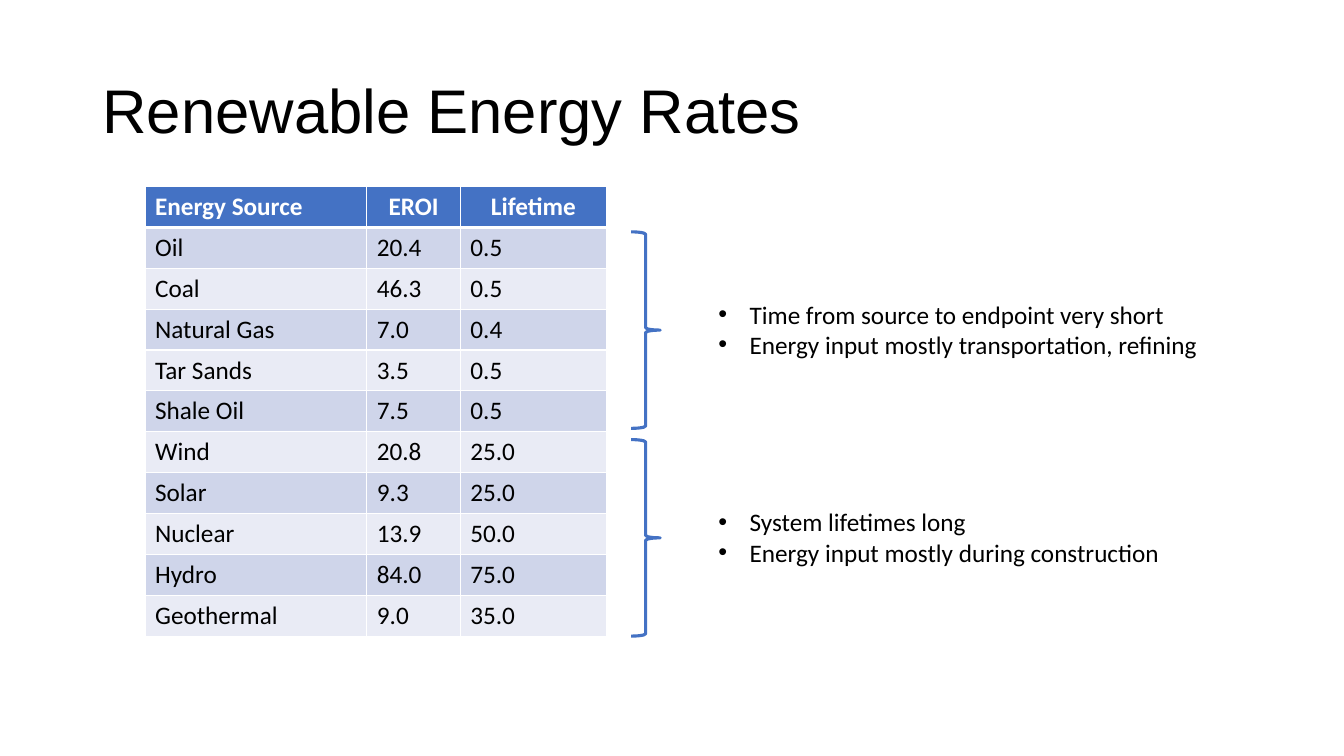
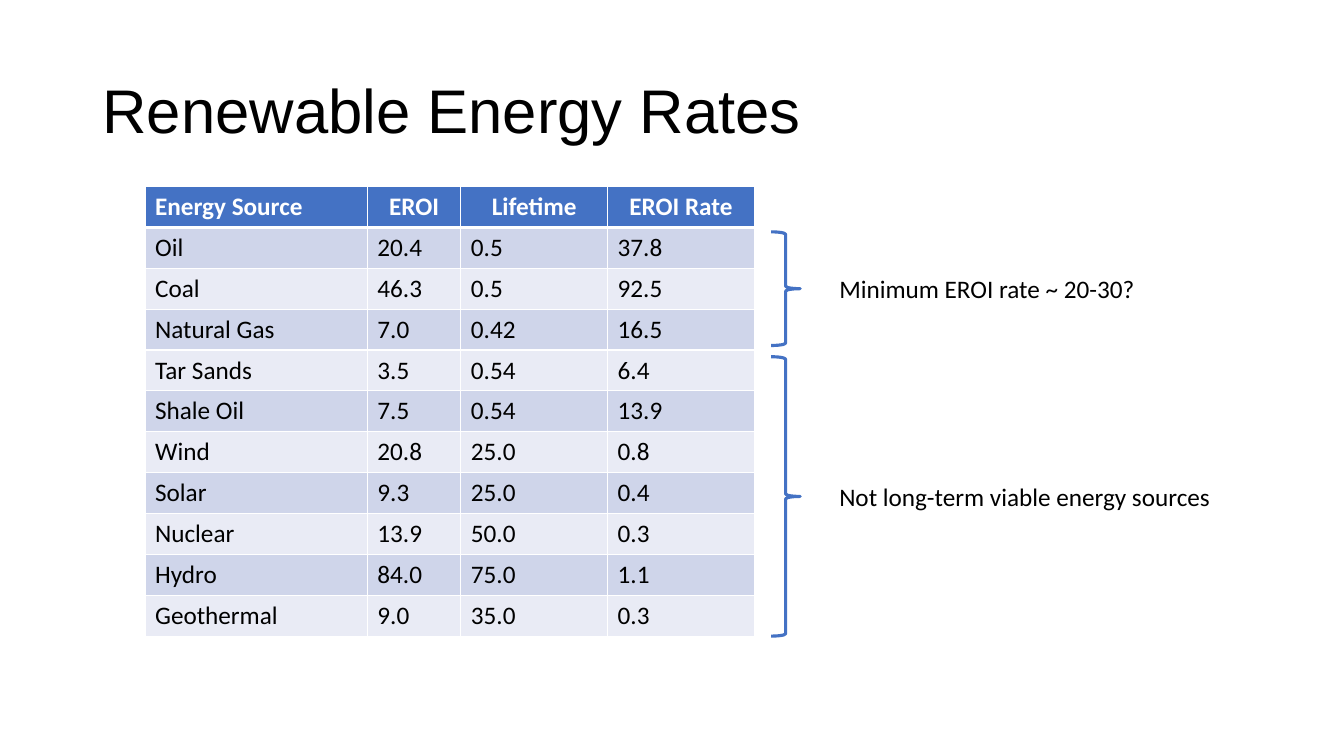
"""Build two slides comparing energy sources by EROI, lifetime and EROI rate."""
from dataclasses import dataclass

from lxml import etree
from pptx import Presentation
from pptx.dml.color import RGBColor
from pptx.enum.shapes import MSO_SHAPE
from pptx.enum.text import MSO_ANCHOR, MSO_AUTO_SIZE, PP_ALIGN
from pptx.oxml.ns import qn
from pptx.util import Pt

LEFT, CENTER = PP_ALIGN.LEFT, PP_ALIGN.CENTER
MIDDLE = MSO_ANCHOR.MIDDLE
GROW = MSO_AUTO_SIZE.SHAPE_TO_FIT_TEXT
BRACE = MSO_SHAPE.RIGHT_BRACE
PX = 5080


@dataclass(frozen=True)
class Theme:
    accent: str = "4472C4"
    band_dark: str = "CFD5EA"
    band_light: str = "E9EBF5"
    text: str = "000000"
    white: str = "FFFFFF"
    title_font: str = "Arial"
    body_font: str = "Calibri"
    title_size: int = 44
    body_size: int = 18
    brace_width: float = 2.25
    rule: int = 1
    header_rule: int = 3


THEME = Theme()


def write(frame, *lines, font=THEME.body_font, size=THEME.body_size, color=THEME.text,
          bold=False, align=LEFT, spacing=None, bullet_indent=0):
    for index, line in enumerate(lines):
        paragraph = frame.add_paragraph() if index else frame.paragraphs[0]
        paragraph.alignment = align
        if spacing:
            paragraph.line_spacing = spacing
        if bullet_indent:
            properties = paragraph._p.get_or_add_pPr()
            properties.set("marL", str(bullet_indent * PX))
            properties.set("indent", str(-bullet_indent * PX))
            etree.SubElement(properties, qn("a:buFont"), typeface="Arial")
            etree.SubElement(properties, qn("a:buChar"), char="•")
        run = paragraph.add_run()
        run.text = line
        run.font.name = font
        run.font.size = Pt(size)
        run.font.bold = bold
        run.font.color.rgb = RGBColor.from_string(color)


def add_border(cell, side, width):
    border = etree.SubElement(cell._tc.get_or_add_tcPr(), qn(f"a:{side}"), w=str(Pt(width)))
    fill = etree.SubElement(border, qn("a:solidFill"))
    etree.SubElement(fill, qn("a:srgbClr"), val=THEME.white)


TITLE = "Renewable Energy Rates"
TABLE_LEFT, TABLE_TOP, ROW_HEIGHT = 259, 333, 73
BRACES_TOP, BRACES_BOTTOM, BRACE_GAP, BRACE_WIDTH = 414, 1136, 20, 52
NOTE_PADDING, NOTE_LINE, BULLET_INDENT = 18, 55, 56

SOURCES = ["Energy Source", "Oil", "Coal", "Natural Gas", "Tar Sands", "Shale Oil",
           "Wind", "Solar", "Nuclear", "Hydro", "Geothermal"]
EROI = ["EROI", "20.4", "46.3", "7.0", "3.5", "7.5", "20.8", "9.3", "13.9", "84.0", "9.0"]
LONG_LIVES = ["25.0", "25.0", "50.0", "75.0", "35.0"]
ROUNDED_LIFETIME = ["Lifetime", "0.5", "0.5", "0.4", "0.5", "0.5", *LONG_LIVES]
LIFETIME = ["Lifetime", "0.5", "0.5", "0.42", "0.54", "0.54", *LONG_LIVES]
EROI_RATE = ["EROI Rate", "37.8", "92.5", "16.5", "6.4", "13.9",
             "0.8", "0.4", "0.3", "1.1", "0.3"]

COMPARISONS = [
    dict(columns=[SOURCES, EROI, ROUNDED_LIFETIME], widths=[396, 167, 261],
         brace_left=1127, first_brace=351, note_left=1265, bullet_indent=BULLET_INDENT,
         notes=[(902, ["Time from source to endpoint very short",
                       "Energy input mostly transportation, refining"]),
                (833, ["System lifetimes long",
                       "Energy input mostly during construction"])]),
    dict(columns=[SOURCES, EROI, LIFETIME, EROI_RATE], widths=[397, 167, 262, 262],
         brace_left=1377, first_brace=203, note_left=1481, bullet_indent=0,
         notes=[(569, ["Minimum EROI rate ~ 20-30?"]),
                (706, ["Not long-term viable energy sources"])]),
]

deck = Presentation()
deck.slide_width, deck.slide_height = 2400 * PX, 1350 * PX
title_only = deck.slide_layouts[5]

for comparison in COMPARISONS:
    slide = deck.slides.add_slide(title_only)
    title = slide.shapes.title
    title.left, title.top, title.width, title.height = 165 * PX, 72 * PX, 2070 * PX, 261 * PX
    title.text_frame.vertical_anchor = MIDDLE
    write(title.text_frame, TITLE, font=THEME.title_font, size=THEME.title_size, spacing=0.9)

    widths = comparison["widths"]
    rates = slide.shapes.add_table(
        len(SOURCES), len(widths), TABLE_LEFT * PX, TABLE_TOP * PX,
        sum(widths) * PX, len(SOURCES) * ROW_HEIGHT * PX).table
    for column, (width, values) in enumerate(zip(widths, comparison["columns"])):
        rates.columns[column].width = width * PX
        for row, value in enumerate(values):
            cell = rates.cell(row, column)
            header = row == 0
            add_border(cell, "lnL", THEME.rule)
            add_border(cell, "lnR", THEME.rule)
            add_border(cell, "lnT", THEME.header_rule if row == 1 else THEME.rule)
            add_border(cell, "lnB", THEME.header_rule if header else THEME.rule)
            band = THEME.band_dark if row % 2 else THEME.band_light
            cell.fill.solid()
            cell.fill.fore_color.rgb = RGBColor.from_string(THEME.accent if header else band)
            write(cell.text_frame, value, bold=header,
                  color=THEME.white if header else THEME.text,
                  align=CENTER if header and column else LEFT)

    second_top = BRACES_TOP + comparison["first_brace"] + BRACE_GAP
    spans = [(BRACES_TOP, comparison["first_brace"]),
             (second_top, BRACES_BOTTOM - second_top)]
    for (top, height), (note_width, lines) in zip(spans, comparison["notes"]):
        brace = slide.shapes.add_shape(
            BRACE, comparison["brace_left"] * PX, top * PX, BRACE_WIDTH * PX, height * PX)
        brace.shadow.inherit = False
        brace.fill.background()
        brace.line.color.rgb = RGBColor.from_string(THEME.accent)
        brace.line.width = Pt(THEME.brace_width)

        note_height = NOTE_PADDING * 2 // 2 + NOTE_LINE * len(lines)
        note_top = top + (height - note_height) // 2
        note = slide.shapes.add_textbox(
            comparison["note_left"] * PX, note_top * PX, note_width * PX, note_height * PX)
        note.text_frame.word_wrap = False
        note.text_frame.auto_size = GROW
        write(note.text_frame, *lines, bullet_indent=comparison["bullet_indent"])

deck.save("out.pptx")
